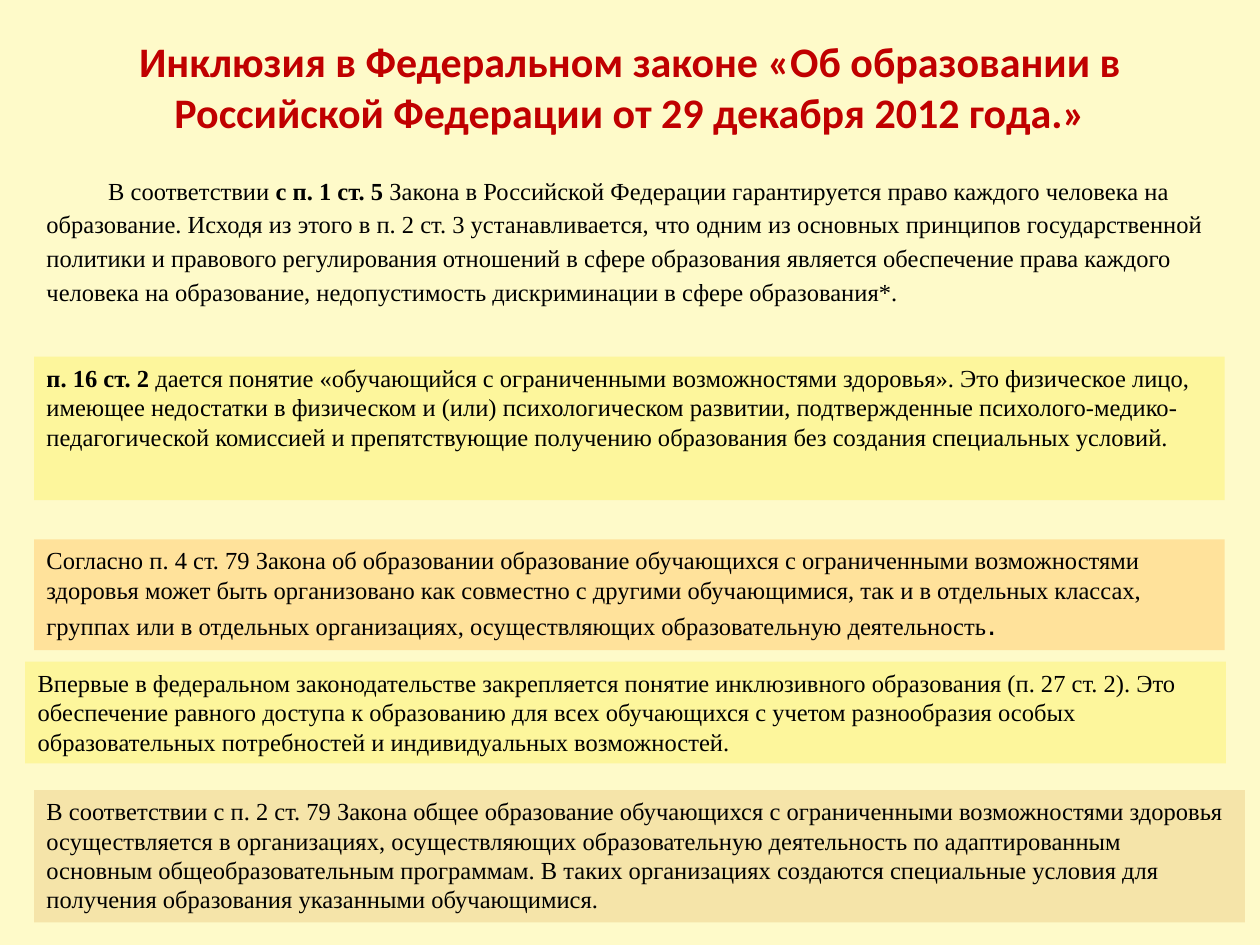
from pptx import Presentation
from pptx.dml.color import RGBColor
from pptx.enum.shapes import MSO_SHAPE
from pptx.enum.text import MSO_ANCHOR, PP_ALIGN
from pptx.util import Inches, Pt

RECT = MSO_SHAPE.RECTANGLE
TOP, MIDDLE = MSO_ANCHOR.TOP, MSO_ANCHOR.MIDDLE
LEFT, CENTER = PP_ALIGN.LEFT, PP_ALIGN.CENTER

COLORS = {
    "cream": "FEFAC9",
    "yellow": "FDF69C",
    "orange": "FFE29B",
    "sand": "F5E4A9",
    "red": "C00000",
    "black": "000000",
}

prs = Presentation()
prs.slide_width, prs.slide_height = Inches(10), Inches(7.5)
COL, ROW = prs.slide_width / 100, prs.slide_height / 75
s = prs.slides.add_slide(prs.slide_layouts[6])
s.background.fill.solid()
s.background.fill.fore_color.rgb = RGBColor.from_string(COLORS["cream"])


def place(col, row, cols, rows):
    return int(col * COL), int(row * ROW), int(cols * COL), int(rows * ROW)


def write(sp, runs, font, size, color, align, anchor):
    tf = sp.text_frame
    tf.word_wrap = True
    tf.vertical_anchor = anchor
    p = tf.paragraphs[0]
    p.alignment = align
    p.font.name, p.font.size = font, Pt(size)
    p.font.color.rgb = RGBColor.from_string(COLORS[color])
    for text, bold in runs:
        r = p.add_run()
        r.text = text
        r.font.bold = bold
    return p


title = s.shapes.add_textbox(*place(5, 3, 90, 7.7))
write(title, [("Инклюзия в Федеральном законе «Об образовании в Российской Федерации "
               "от 29 декабря 2012 года.»", True)],
      "Calibri", 24, "red", CENTER, MIDDLE)

articles = [
    (2.7, 13.1, 94.5, 11.8, "cream", [
        ("В соответствии ", False),
        ("с п. 1 ст. 5 ", True),
        ("Закона в Российской Федерации гарантируется право каждого человека на "
         "образование. Исходя из этого в п. 2 ст. 3 устанавливается, что одним из "
         "основных принципов государственной политики и правового регулирования "
         "отношений в сфере образования является обеспечение права каждого человека "
         "на образование, недопустимость дискриминации в сфере образования*.", False)]),
    (2.7, 28.3, 94.5, 11.4, "yellow", [
        ("п. 16 ст. 2", True),
        (" дается понятие «обучающийся с ограниченными возможностями здоровья». Это "
         "физическое лицо, имеющее недостатки в физическом и (или) психологическом "
         "развитии, подтвержденные психолого-медико-педагогической комиссией и "
         "препятствующие получению образования без создания специальных условий.", False)]),
    (2.7, 42.8, 94.5, 8.8, "orange", [
        ("Согласно п. 4 ст. 79 Закона об образовании образование обучающихся с "
         "ограниченными возможностями здоровья может быть организовано как совместно "
         "с другими обучающимися, так и в отдельных классах, группах или в отдельных "
         "организациях, осуществляющих образовательную деятельность", False),
        (".", False)]),
    (2, 52.5, 95.3, 8.1, "yellow", [
        ("Впервые в федеральном законодательстве закрепляется понятие инклюзивного "
         "образования (п. 27 ст. 2). Это обеспечение равного доступа к образованию для "
         "всех обучающихся с учетом разнообразия особых образовательных потребностей и "
         "индивидуальных возможностей.", False)]),
    (2.7, 62.7, 96.1, 10.5, "sand", [
        ("В соответствии с п. 2 ст. 79 Закона общее образование обучающихся с "
         "ограниченными возможностями здоровья осуществляется в организациях, "
         "осуществляющих образовательную деятельность по адаптированным основным "
         "общеобразовательным программам. В таких организациях создаются специальные "
         "условия для получения образования указанными обучающимися.", False)]),
]

paragraphs = []
for col, row, cols, rows, fill, runs in articles:
    sp = s.shapes.add_shape(RECT, *place(col, row, cols, rows))
    sp.shadow.inherit = False
    sp.fill.solid()
    sp.fill.fore_color.rgb = RGBColor.from_string(COLORS[fill])
    sp.line.fill.background()
    paragraphs.append(write(sp, runs, "Times New Roman", 14, "black", LEFT, TOP))

intro, joint = paragraphs[0], paragraphs[2]
intro.line_spacing = 1.15
intro._p.get_or_add_pPr().set("indent", str(int(4.9 * COL)))
stop = joint.runs[-1]
stop.font.name, stop.font.size = "Arial", Pt(18)

prs.save("out.pptx")
